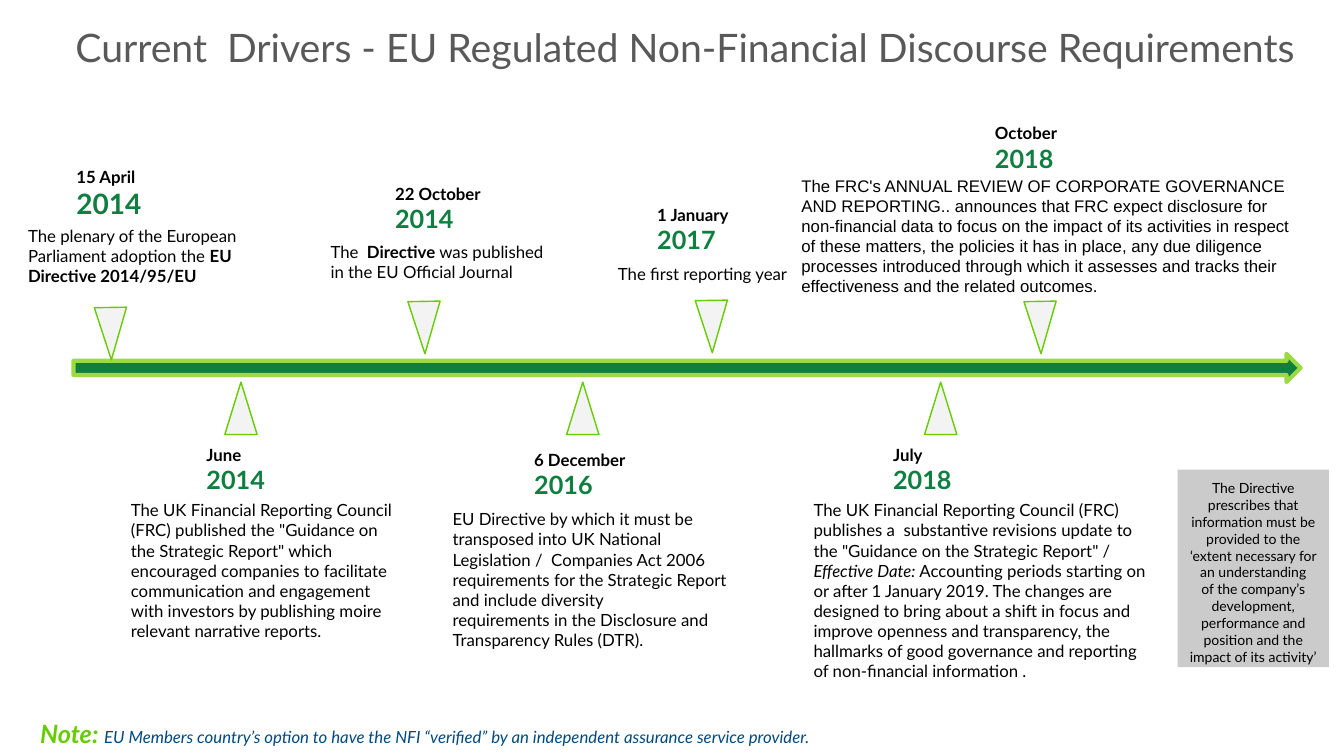
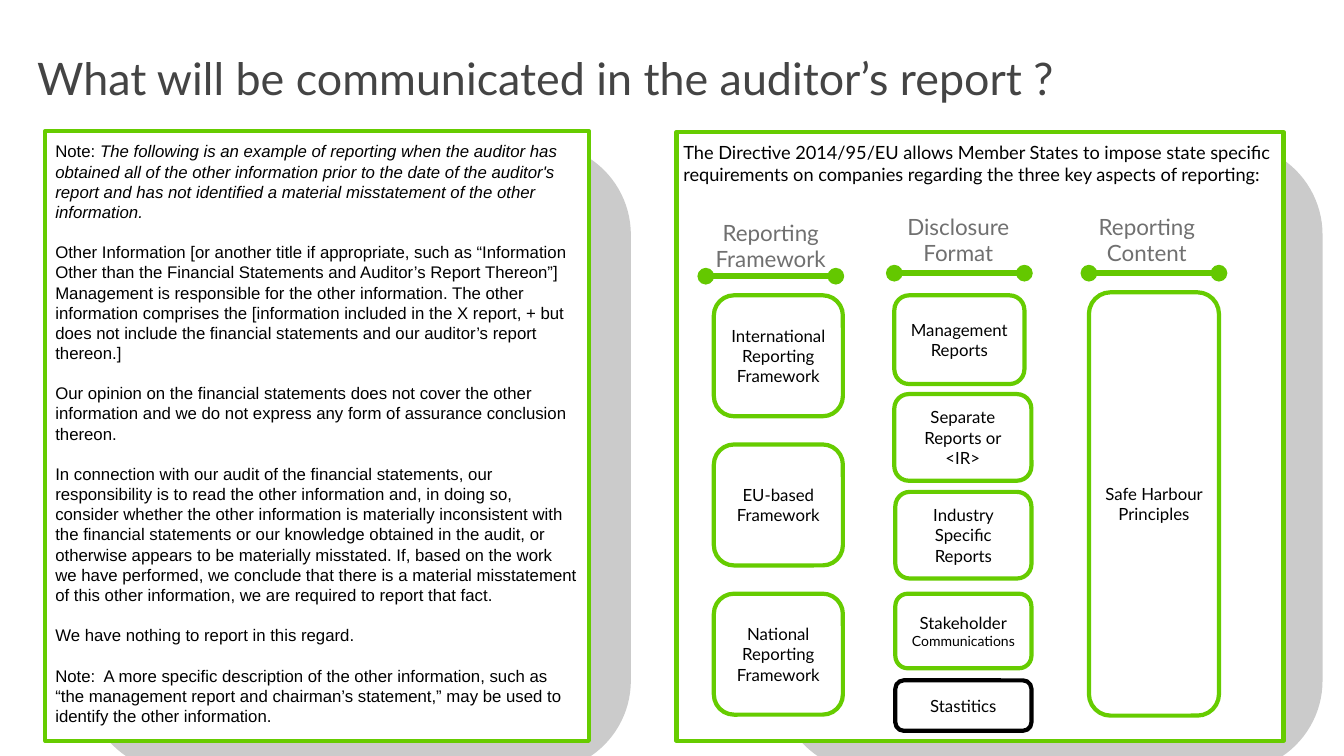
import pptx
import pptx.dml.color
import pptx.enum.shapes
import pptx.enum.text
import pptx.oxml.ns
import pptx.util
from lxml import etree

RGBColor = pptx.dml.color.RGBColor
Pt = pptx.util.Pt
SHAPE = pptx.enum.shapes.MSO_SHAPE
ALIGN = pptx.enum.text.PP_ALIGN
ANCHOR = pptx.enum.text.MSO_ANCHOR

BLACK = RGBColor(0x00, 0x00, 0x00)
WHITE = RGBColor(0xFF, 0xFF, 0xFF)
GREEN = RGBColor(0x66, 0xCC, 0x00)
RULE_GREEN = RGBColor(0x64, 0xC8, 0x00)
DARK_GREEN = RGBColor(0x0F, 0x7F, 0x40)
LIME = RGBColor(0x9B, 0xDA, 0x44)
NAVY = RGBColor(0x00, 0x49, 0x7F)
PALE_GREY = RGBColor(0xF3, 0xF3, 0xF3)
SHADE_GREY = RGBColor(0xCB, 0xCB, 0xCB)
HEADING_GREY = RGBColor(0x70, 0x70, 0x70)
TITLE_GREY = RGBColor(0x59, 0x59, 0x59)
TITLE_DARK = RGBColor(0x44, 0x44, 0x44)

# Grid: 13.33 columns by 7.5 rows
deck = pptx.Presentation()
deck.slide_width = pptx.util.Inches(13.33)
deck.slide_height = pptx.util.Inches(7.5)
COLUMN = deck.slide_width / 13.33
ROW = deck.slide_height / 7.5
INSET = pptx.util.Inches(0.1)
BLANK = deck.slide_layouts[6]


def add_box(page, area, paragraphs=(), kind=None, fill=None, line=None, weight=3,
            size=12, font="Lato", color=BLACK, align=ALIGN.LEFT, anchor=ANCHOR.TOP,
            leading=None, gap=0):
    """Add a shape, or a text box if kind is None.

    A paragraph is a list of runs: (text, marks "b"/"i", size, colour).
    """
    left, top, width, height = area
    place = [int(left * COLUMN), int(top * ROW), int(width * COLUMN), int(height * ROW)]
    if kind is None:
        box = page.shapes.add_textbox(*place)
    else:
        box = page.shapes.add_shape(kind, *place)
        box.shadow.inherit = False
        if fill is None:
            box.fill.background()
        else:
            box.fill.solid()
            box.fill.fore_color.rgb = fill
        if line is None:
            box.line.fill.background()
        else:
            box.line.color.rgb = line
            box.line.width = Pt(weight)
    frame = box.text_frame
    frame.word_wrap = True
    frame.vertical_anchor = anchor
    frame.margin_left = frame.margin_right = INSET
    frame.margin_top = frame.margin_bottom = INSET
    for index, runs in enumerate(paragraphs):
        para = frame.add_paragraph() if index else frame.paragraphs[0]
        para.alignment = align
        para.space_after = Pt(gap)
        if leading:
            para.line_spacing = Pt(leading)
        for text, marks, run_size, run_color in runs:
            span = para.add_run()
            span.text = text
            span.font.name = font
            span.font.size = Pt(run_size or size)
            span.font.bold = "b" in marks
            span.font.italic = "i" in marks
            span.font.color.rgb = run_color or color
    return box


def plain(*lines):
    """One unmarked run for each paragraph."""
    return [[(line, "", None, None)] for line in lines]


# Slide 1: timeline
page = deck.slides.add_slide(BLANK)
add_box(page, (0.65, 0.13, 12.57, 0.68),
        plain("Current  Drivers - EU Regulated Non-Financial Discourse Requirements"),
        size=28, color=TITLE_GREY)
add_box(page, (0.73, 3.51, 12.17, 0.28), kind=SHAPE.RIGHT_ARROW, fill=DARK_GREEN, line=LIME)

# Markers: left, top, rotation
for left, top, turn in [(0.94, 3.05, 179), (4.05, 2.99, 179), (6.9, 2.98, 179),
                        (10.16, 2.99, 179), (2.23, 3.79, 0), (5.62, 3.79, 0),
                        (9.17, 3.79, 0)]:
    marker = add_box(page, (left, top, 0.32, 0.52), kind=SHAPE.ISOSCELES_TRIANGLE,
                     fill=PALE_GREY, line=GREEN, weight=1)
    marker.rotation = turn

# Dates: left, top, day, year, year size
for left, top, day, year, year_size in [
    (0.66, 1.55, "15 April", "2014", 20),
    (3.82, 1.72, "22 October", "2014", 18),
    (6.42, 1.93, "1 January", "2017", 18),
    (9.77, 1.12, "October", "2018", 18),
    (1.95, 4.31, "June", "2014", 18),
    (5.2, 4.36, "6 December", "2016", 18),
    (8.76, 4.31, "July", "2018", 18),
]:
    add_box(page, (left, top, 1.43, 0.59),
            [[(day, "b", None, None)], [(year, "b", year_size, DARK_GREEN)]])

# Events
events = [
    ((0.18, 2.14, 2.44, 0.75), [[
        ("The plenary of the European Parliament adoption the ", "", None, None),
        ("EU Directive 2014/95/EU", "b", None, None)]]),
    ((3.18, 2.3, 2.38, 0.59), [[
        ("The ", "", None, None),
        (" Directive ", "b", None, None),
        ("was published in the EU Official Journal", "", None, None)]]),
    ((6.03, 2.52, 2.38, 0.59), plain("The first reporting year")),
    ((1.2, 4.86, 2.84, 1.51), plain(
        "The UK Financial Reporting Council (FRC) published the \"Guidance on the Strategic "
        "Report\" which encouraged companies to facilitate communication and engagement with "
        "investors by publishing moire relevant narrative reports.")),
    ((4.39, 4.95, 2.94, 1.64), plain(
        "EU Directive by which it must be transposed into UK National Legislation /  Companies "
        "Act 2006 requirements for the Strategic Report and include diversity",
        "requirements in the Disclosure and Transparency Rules (DTR).")),
    ((7.97, 4.86, 3.58, 1.93), [[
        ("The UK Financial Reporting Council (FRC) publishes a  substantive revisions update to "
         "the \"Guidance on the Strategic Report\" / ", "", None, None),
        ("Effective Date:", "i", None, None),
        (" Accounting periods starting on or after 1 January 2019. The changes are designed to "
         "bring about a shift in focus and improve openness and transparency, the hallmarks of "
         "good governance and reporting of non-financial information .", "", None, None)]]),
]
for area, paragraphs in events:
    add_box(page, area, paragraphs)
add_box(page, (7.85, 1.64, 5.05, 1.46), plain(
    "The FRC's ANNUAL REVIEW OF CORPORATE GOVERNANCE AND REPORTING.. announces that FRC expect "
    "disclosure for non-financial data to focus on the impact of its activities in respect of "
    "these matters, the policies it has in place, any due diligence processes introduced through "
    "which it assesses and tracks their effectiveness and the related outcomes."),
    font="Arial", leading=14.4)

# Side panel and footnote
add_box(page, (11.68, 4.66, 1.5, 1.96), plain(
    "The Directive prescribes that information must be",
    "provided to the ‘extent necessary for an understanding",
    "of the company’s development, performance and",
    "position and the impact of its activity’"),
    kind=SHAPE.RECTANGLE, fill=SHADE_GREY, size=10, align=ALIGN.CENTER)
add_box(page, (0.3, 7.03, 10.84, 0.4), [[
    ("Note: ", "bi", 18, GREEN),
    ("EU Members country’s option to have the NFI “verified” by an independent assurance "
     "service provider.", "i", None, NAVY)]])

# Slide 2: auditor's report
page = deck.slides.add_slide(BLANK)
for left in (0.86, 7.72):
    add_box(page, (left, 1.43, 5.39, 6.22), kind=SHAPE.ROUNDED_RECTANGLE,
            fill=SHADE_GREY, line=SHADE_GREY, weight=1)
add_box(page, (0.27, 0.4, 13, 0.65),
        plain("What will be communicated in the auditor’s report ?"),
        size=32, color=TITLE_DARK)

# Left panel: example wording
example = [[
    ("Note: ", "", None, None),
    ("The following is an example of reporting when the auditor has obtained all of the other "
     "information prior to the date of the auditor's report and has not identified a material "
     "misstatement of the other information.", "i", None, None)]]
example += plain(
    "Other Information [or another title if appropriate, such as “Information Other than the "
    "Financial Statements and Auditor’s Report Thereon”] Management is responsible for the other "
    "information. The other information comprises the [information included in the X report, + "
    "but does not include the financial statements and our auditor’s report thereon.]",
    "Our opinion on the financial statements does not cover the other information and we do not "
    "express any form of assurance conclusion thereon.",
    "In connection with our audit of the financial statements, our responsibility is to read the "
    "other information and, in doing so, consider whether the other information is materially "
    "inconsistent with the financial statements or our knowledge obtained in the audit, or "
    "otherwise appears to be materially misstated. If, based on the work we have performed, we "
    "conclude that there is a material misstatement of this other information, we are required "
    "to report that fact.",
    "We have nothing to report in this regard.",
    "Note:  A more specific description of the other information, such as “the management report "
    "and chairman’s statement,” may be used to identify the other information.")
add_box(page, (0.45, 1.3, 5.39, 6.05), example, kind=SHAPE.RECTANGLE, fill=WHITE, line=GREEN,
        font="Arial", leading=14.4, gap=14.4)

# Right panel: frame and introduction
add_box(page, (6.71, 1.31, 6.02, 6.04), kind=SHAPE.RECTANGLE, fill=WHITE, line=GREEN)
add_box(page, (6.68, 1.3, 6.07, 0.57), plain(
    "The Directive 2014/95/EU allows Member States to impose state specific requirements on "
    "companies regarding the three key aspects of reporting:"), size=13)

# Column headings with dotted rules: text left, text top, rule left, rule height
for left, top, rule_left, rule_top, lines in [
    (6.93, 2.07, 7, 2.74, ("Reporting", "Framework")),
    (8.79, 2.01, 8.87, 2.71, ("Disclosure", "Format")),
    (10.66, 2.01, 10.8, 2.71, ("Reporting", "Content")),
]:
    add_box(page, (left, top, 1.43, 0.89), plain(*lines), size=16, color=HEADING_GREY,
            align=ALIGN.CENTER)
    rule = page.shapes.add_connector(
        pptx.enum.shapes.MSO_CONNECTOR.STRAIGHT,
        int(rule_left * COLUMN), int(rule_top * ROW),
        int((rule_left + 1.29) * COLUMN), int(rule_top * ROW))
    rule.line.color.rgb = RULE_GREEN
    rule.line.width = Pt(4)
    outline = rule.line._get_or_add_ln()
    for end in ("a:headEnd", "a:tailEnd"):
        etree.SubElement(outline, pptx.oxml.ns.qn(end), type="oval")
    etree.SubElement(rule._element.spPr, pptx.oxml.ns.qn("a:effectLst"))

# Boxes in the three columns
FRAMEWORK_TOP, FRAMEWORK_STEP = 2.93, 1.48
cards = [
    ((7.08, FRAMEWORK_TOP + FRAMEWORK_STEP * row, 1.28, 1.2), plain(*lines), GREEN)
    for row, lines in enumerate([("International", "Reporting", "Framework"),
                                 ("EU-based", "Framework"),
                                 ("National", "Reporting", "Framework")])
]
cards += [
    ((8.87, 2.93, 1.29, 0.88), plain("Management", "Reports"), GREEN),
    ((8.87, 3.91, 1.36, 0.86), plain("Separate Reports or <IR>"), GREEN),
    ((8.88, 4.88, 1.35, 0.86), plain("Industry Specific", "Reports"), GREEN),
    ((8.88, 5.89, 1.35, 0.74), [[("Stakeholder", "", None, None)],
                                [("Communications", "", 10, None)]], GREEN),
    ((8.88, 6.75, 1.35, 0.5), plain("Stastitics"), BLACK),
    ((10.8, 2.9, 1.29, 4.2), plain("Safe Harbour Principles"), GREEN),
]
for area, paragraphs, line in cards:
    add_box(page, area, paragraphs, kind=SHAPE.ROUNDED_RECTANGLE, line=line,
            align=ALIGN.CENTER, anchor=ANCHOR.MIDDLE)

deck.save("out.pptx")
